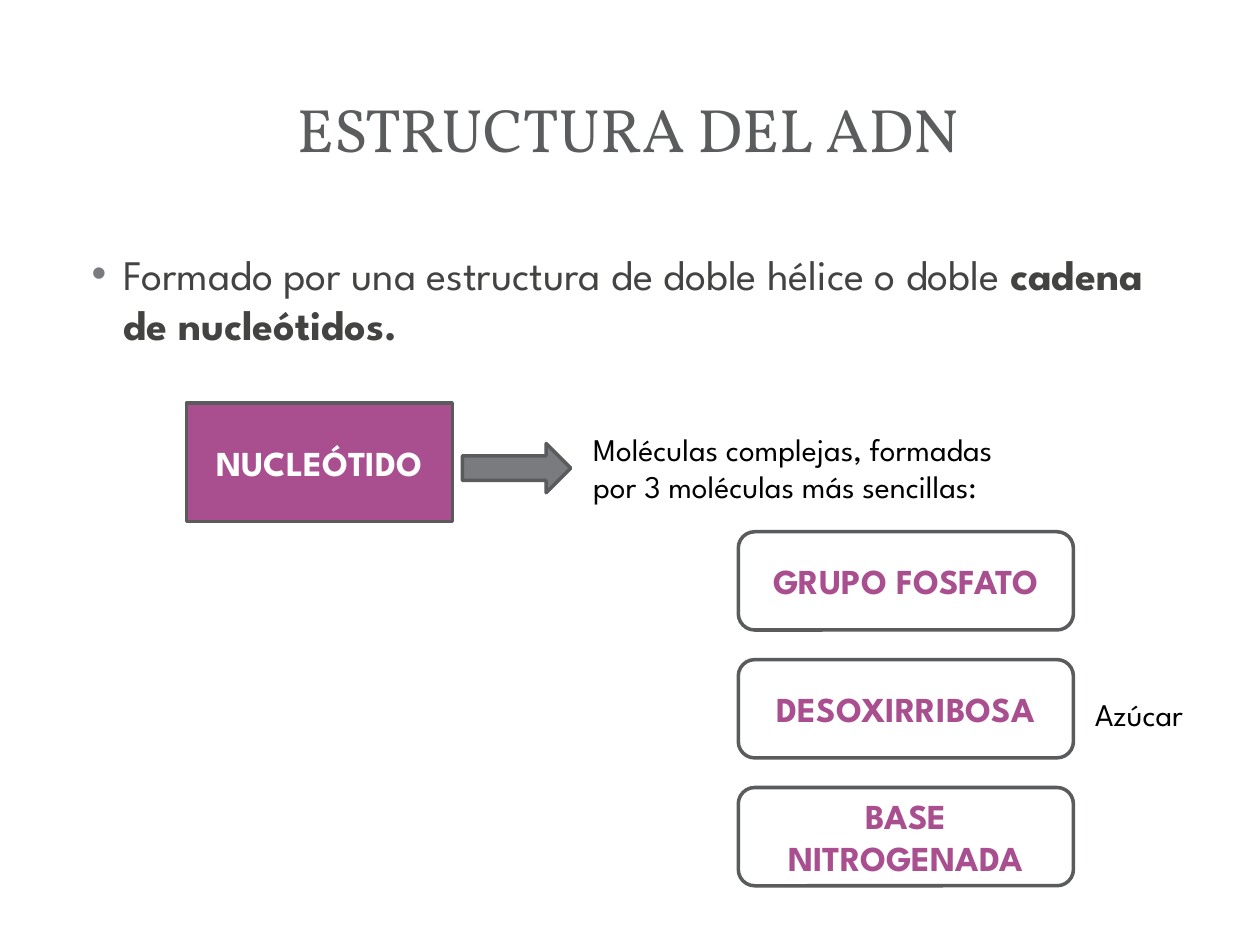
from lxml.etree import SubElement
from pptx import Presentation
from pptx.dml.color import RGBColor
from pptx.enum.shapes import MSO_SHAPE as Shape
from pptx.enum.text import MSO_ANCHOR as Anchor, PP_ALIGN as Align
from pptx.oxml.ns import qn
from pptx.util import Inches, Pt

WHITE = RGBColor(0xFF, 0xFF, 0xFF)
BLACK = RGBColor(0, 0, 0)
PURPLE = RGBColor(0xA9, 0x4F, 0x8F)
GRAY = RGBColor(0x79, 0x7B, 0x7E)
OUTLINE = RGBColor(0x5A, 0x5B, 0x5D)
TITLE_GRAY = RGBColor(0x5B, 0x5C, 0x5E)
BODY_GRAY = RGBColor(0x43, 0x43, 0x42)

TITLE = "ESTRUCTURA DEL ADN"
STATEMENT = [("Formado por una estructura de doble hélice o doble ", False),
             ("cadena de nucleótidos.", True)]
CONCEPT = "NUCLEÓTIDO"
DEFINITION = ["Moléculas complejas, formadas", "por 3 moléculas más sencillas:"]
COMPONENTS = ["GRUPO FOSFATO", "DESOXIRRIBOSA", "BASE NITROGENADA"]
SUGAR = "Azúcar"

COMPONENT_LEFT, COMPONENT_TOP = 5.86, 4.22
COMPONENT_WIDTH, COMPONENT_HEIGHT = 2.66, 0.78
COMPONENT_STEP = 1.015

TITLE_FONT = {"name": "Vollkorn", "size": Pt(35)}
BODY_FONT = {"name": "League Spartan", "size": Pt(24)}
NOTE_FONT = {"name": "League Spartan", "size": Pt(18)}
LABEL_FONT = {"name": "League Spartan", "size": Pt(20), "bold": True}


def add_run(paragraph, text, font, color):
    run = paragraph.add_run()
    run.text = text
    for attribute, value in font.items():
        setattr(run.font, attribute, value)
    run.font.color.rgb = color


def add_text(slide, box, lines, font, color, align=Align.LEFT, anchor=Anchor.TOP):
    """Add a text box; each line is a list of (text, bold) runs."""
    frame = slide.shapes.add_textbox(*map(Inches, box)).text_frame
    frame.word_wrap = True
    frame.vertical_anchor = anchor
    for index, line in enumerate(lines):
        paragraph = frame.add_paragraph() if index else frame.paragraphs[0]
        paragraph.alignment = align
        for text, bold in line:
            add_run(paragraph, text, font | {"bold": bold}, color)
    return frame


def add_block(slide, kind, box, fill, label="", color=WHITE):
    block = slide.shapes.add_shape(kind, *map(Inches, box))
    block.shadow.inherit = False
    block.fill.solid()
    block.fill.fore_color.rgb = fill
    block.line.color.rgb = OUTLINE
    block.line.width = Pt(2)
    if label:
        frame = block.text_frame
        frame.word_wrap = True
        frame.vertical_anchor = Anchor.MIDDLE
        frame.paragraphs[0].alignment = Align.CENTER
        add_run(frame.paragraphs[0], label, LABEL_FONT, color)


def add_bullet(paragraph, color):
    properties = paragraph._p.get_or_add_pPr()
    properties.set("marL", str(Inches(0.38)))
    properties.set("indent", str(Inches(-0.25)))
    bullet_color = SubElement(properties, qn("a:buClr"))
    SubElement(bullet_color, qn("a:srgbClr"), val=str(color))
    SubElement(properties, qn("a:buFont"), typeface="Arial")
    SubElement(properties, qn("a:buChar"), char="•")


def main():
    deck = Presentation()
    deck.slide_width, deck.slide_height = Inches(10), Inches(7.5)
    slide = deck.slides.add_slide(deck.slide_layouts[6])

    add_text(slide, (0.47, 0.45, 9.03, 1.14), [[(TITLE, False)]],
             TITLE_FONT, TITLE_GRAY, Align.CENTER, Anchor.MIDDLE)

    statement = add_text(slide, (0.5, 1.92, 9, 4.78), [STATEMENT],
                         BODY_FONT, BODY_GRAY).paragraphs[0]
    statement.space_before = Pt(4.8)
    add_bullet(statement, GRAY)

    add_block(slide, Shape.RECTANGLE, (1.48, 3.2, 2.11, 0.94), PURPLE, CONCEPT)
    add_text(slide, (4.61, 3.36, 4.3, 0.71),
             [[(line, False)] for line in DEFINITION], NOTE_FONT, BLACK)
    add_block(slide, Shape.RIGHT_ARROW, (3.67, 3.52, 0.86, 0.39), GRAY)

    for row, component in enumerate(COMPONENTS):
        top = COMPONENT_TOP + row * COMPONENT_STEP
        add_block(slide, Shape.ROUNDED_RECTANGLE,
                  (COMPONENT_LEFT, top, COMPONENT_WIDTH, COMPONENT_HEIGHT),
                  WHITE, component, PURPLE)
    add_text(slide, (8.59, 5.47, 1.09, 0.4), [[(SUGAR, False)]], NOTE_FONT, BLACK)

    deck.save("out.pptx")


if __name__ == "__main__":
    main()
